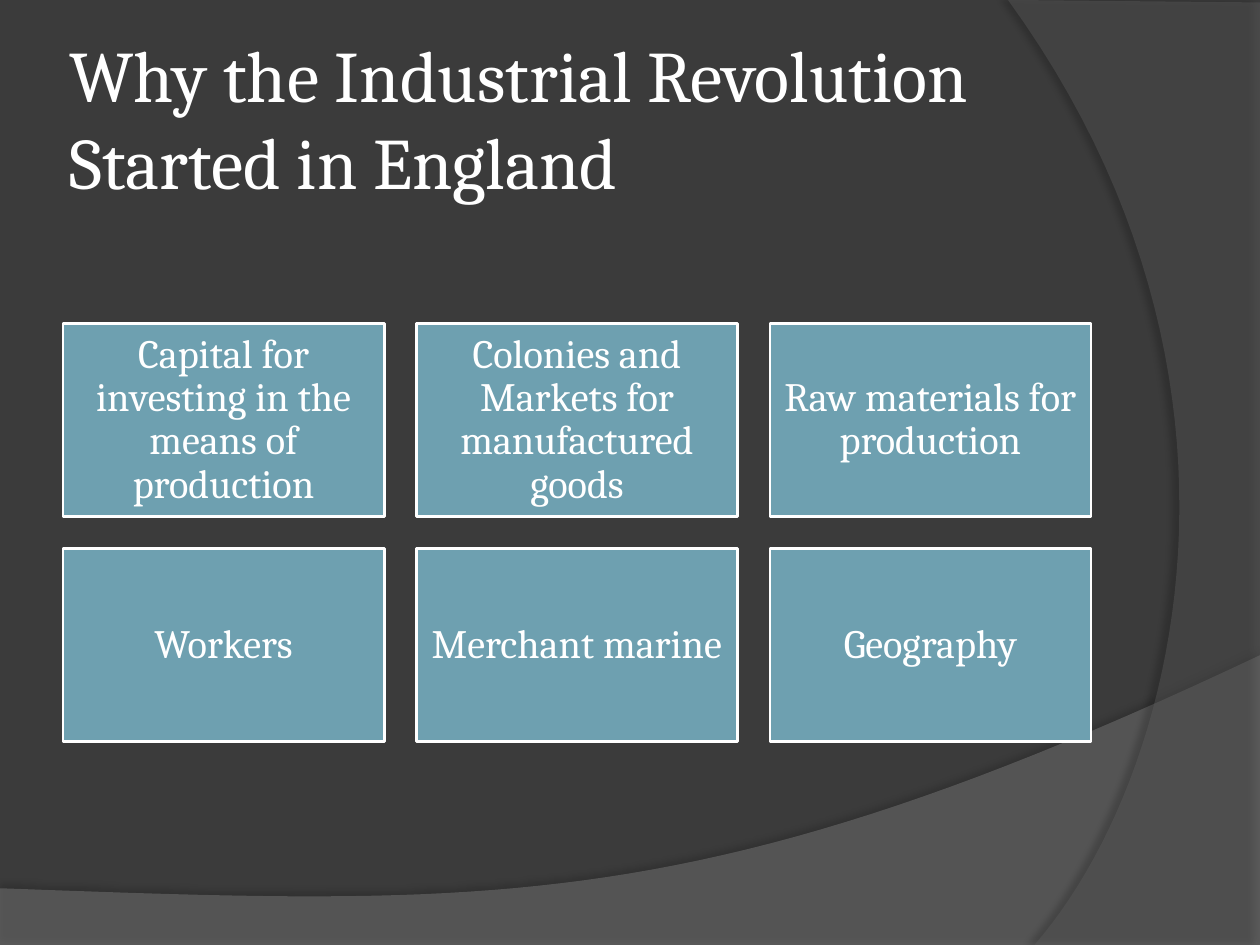
from dataclasses import dataclass

from lxml import etree
from pptx import Presentation
from pptx.dml.color import RGBColor
from pptx.enum.shapes import MSO_SHAPE
from pptx.enum.text import MSO_ANCHOR, MSO_AUTO_SIZE, PP_ALIGN
from pptx.oxml.ns import qn
from pptx.util import Inches, Pt

RECTANGLE = MSO_SHAPE.RECTANGLE
MIDDLE = MSO_ANCHOR.MIDDLE
NO_FIT = MSO_AUTO_SIZE.NONE
LEFT, CENTER = PP_ALIGN.LEFT, PP_ALIGN.CENTER

FONT = "Cambria"
WHITE, BACKGROUND, TILE = "FFFFFF", "3B3B3B", "6EA0B0"
TITLE_TEXT = "Why the Industrial Revolution Started in England"
REASONS = [
    "Capital for investing in the means of production",
    "Colonies and Markets for manufactured goods",
    "Raw materials for production",
    "Workers",
    "Merchant marine",
    "Geography",
]
COLUMNS = 3
GRID_LEFT, GRID_TOP = 0.5, 2.57
TILE_WIDTH, TILE_HEIGHT = 2.55, 1.53
GAP = 0.255
CURVE_STEPS = 48

Point = tuple[float, float]


@dataclass
class Swoosh:
    """A translucent band: straight corners, then one cubic curve."""
    corners: list[Point]
    curve: list[Point]
    color: str
    opacity: int
    shadow_opacity: int
    shadow_distance: float
    shadow_angle: int


SWOOSHES = [
    Swoosh([(0, 7.05), (0, 7.51), (10, 7.51), (10, 5.2)],
           [(10, 5.2), (5.59, 7.29), (3.91, 7.19), (0, 7.05)],
           "7F7F7F", 45, 35, 3.5, 270),
    Swoosh([(10, 0.02), (10, 7.5), (8.21, 7.5)],
           [(8.21, 7.5), (9.35, 6.19), (10.18, 3), (8, 0)],
           "5E5E5E", 40, 45, 4, 180),
]


def rgb(color: str) -> RGBColor:
    return RGBColor.from_string(color)


def curve_points(control: list[Point]) -> list[Point]:
    """Sample a cubic Bezier curve, leaving out its first point."""
    points = []
    for step in range(1, CURVE_STEPS + 1):
        t = step / CURVE_STEPS
        weights = ((1 - t) ** 3, 3 * t * (1 - t) ** 2, 3 * t ** 2 * (1 - t), t ** 3)
        points.append((sum(w * x for w, (x, _) in zip(weights, control)),
                       sum(w * y for w, (_, y) in zip(weights, control))))
    return points


def add_alpha(color_element, percent: int) -> None:
    etree.SubElement(color_element, qn("a:alpha"), val=str(percent * 1000))


def add_swoosh(page, swoosh: Swoosh):
    points = [(Inches(x), Inches(y))
              for x, y in swoosh.corners + curve_points(swoosh.curve)]
    builder = page.shapes.build_freeform(*points[0])
    builder.add_line_segments(points[1:], close=True)
    shape = builder.convert_to_shape()
    shape.fill.solid()
    shape.fill.fore_color.rgb = rgb(swoosh.color)
    shape.line.fill.background()
    shape.shadow.inherit = False
    properties = shape.element.spPr
    add_alpha(properties.find(f"{qn('a:solidFill')}/{qn('a:srgbClr')}"), swoosh.opacity)
    shadow = etree.SubElement(
        properties.find(qn("a:effectLst")), qn("a:outerShdw"),
        blurRad=str(Pt(4)), dist=str(Pt(swoosh.shadow_distance)),
        dir=str(swoosh.shadow_angle * 60000), algn="ctr", rotWithShape="0")
    add_alpha(etree.SubElement(shadow, qn("a:srgbClr"), val="000000"),
              swoosh.shadow_opacity)
    return shape


def write_text(shape, text: str, *, size: float, align, inset: float,
               spacing: float = 1.0) -> None:
    frame = shape.text_frame
    frame.word_wrap = True
    frame.auto_size = NO_FIT
    frame.vertical_anchor = MIDDLE
    frame.margin_left = frame.margin_right = Inches(inset)
    frame.margin_top = frame.margin_bottom = Inches(inset)
    para = frame.paragraphs[0]
    para.alignment = align
    para.line_spacing = spacing
    span = para.add_run()
    span.text = text
    span.font.name = FONT
    span.font.size = Pt(size)
    span.font.color.rgb = rgb(WHITE)


def add_tile(page, index: int, text: str) -> None:
    row, column = divmod(index, COLUMNS)
    box = page.shapes.add_shape(
        RECTANGLE,
        Inches(GRID_LEFT + column * (TILE_WIDTH + GAP)),
        Inches(GRID_TOP + row * (TILE_HEIGHT + GAP)),
        Inches(TILE_WIDTH), Inches(TILE_HEIGHT))
    box.shadow.inherit = False
    box.fill.solid()
    box.fill.fore_color.rgb = rgb(TILE)
    box.line.color.rgb = rgb(WHITE)
    box.line.width = Pt(1.5)
    write_text(box, text, size=23, align=CENTER, inset=0.1, spacing=0.9)


def main() -> None:
    deck = Presentation()
    deck.slide_width, deck.slide_height = Inches(10), Inches(7.5)
    page = deck.slides.add_slide(deck.slide_layouts[5])
    page.background.fill.solid()
    page.background.fill.fore_color.rgb = rgb(BACKGROUND)

    # Title
    title = page.shapes.title
    title.left, title.top = Inches(0.5), Inches(0.3)
    title.width, title.height = Inches(8.17), Inches(1.25)
    write_text(title, TITLE_TEXT, size=41.4, align=LEFT, inset=0.05)

    # Background bands, kept behind the title
    for swoosh in SWOOSHES:
        title.element.addprevious(add_swoosh(page, swoosh).element)

    # Grid of reasons
    for index, reason in enumerate(REASONS):
        add_tile(page, index, reason)

    deck.save("out.pptx")


if __name__ == "__main__":
    main()
